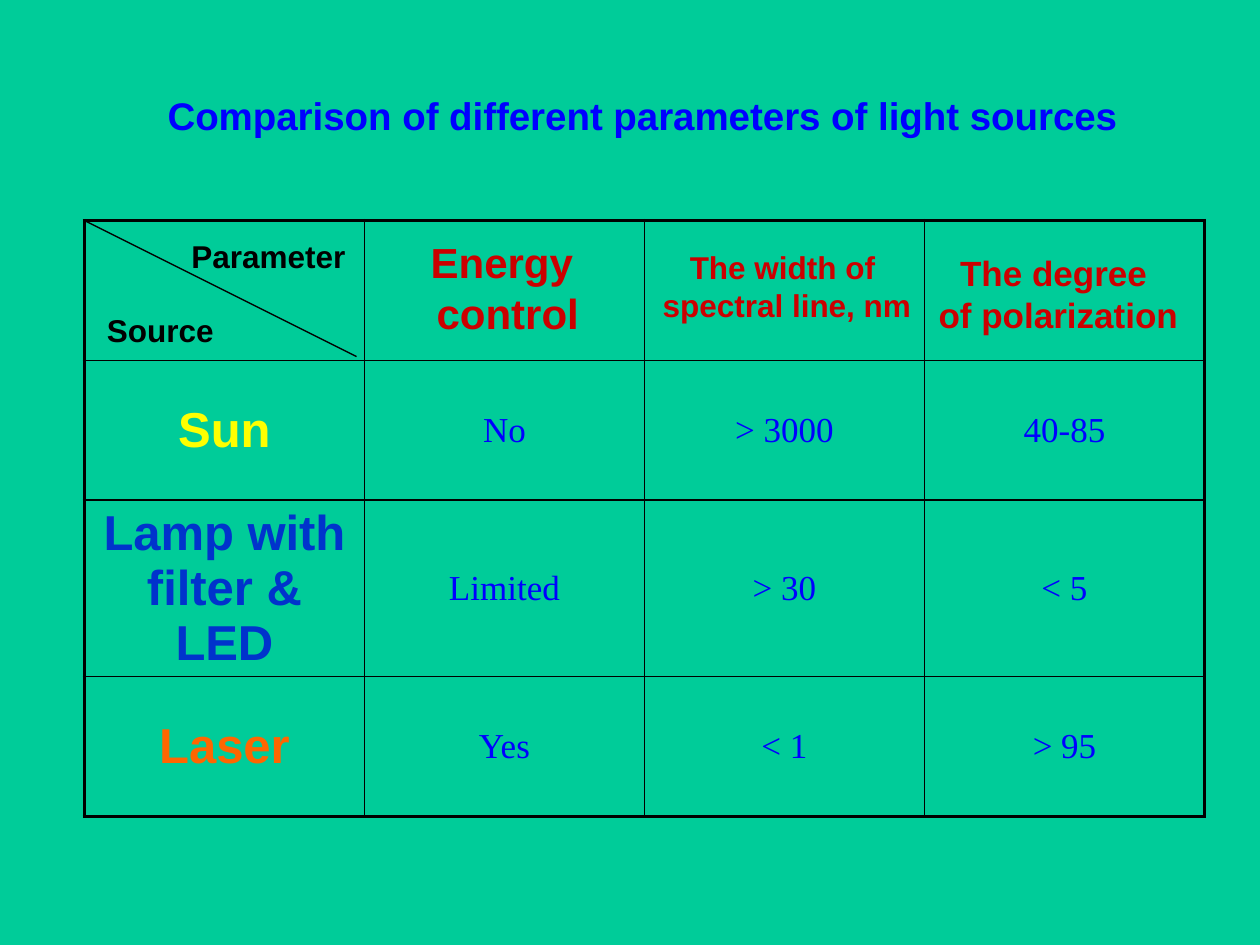
"""Build a slide that compares parameters of light sources in a table."""
import pptx
import pptx.dml.color
import pptx.enum.shapes
import pptx.enum.text
import pptx.oxml.ns
import pptx.util
from dataclasses import dataclass
from lxml import etree

Inches = pptx.util.Inches
Pt = pptx.util.Pt
RGB = pptx.dml.color.RGBColor.from_string
PP_ALIGN = pptx.enum.text.PP_ALIGN
ANCHOR = pptx.enum.text.MSO_ANCHOR
qn = pptx.oxml.ns.qn


@dataclass
class Theme:
    background: str = "00CC99"
    rule: str = "000000"
    value: str = "0000FF"
    parameter: str = "CC0000"
    sun: str = "FFFF00"
    lamp: str = "0033CC"
    laser: str = "FF6600"
    heading_font: str = "Arial"
    value_font: str = "Times New Roman"
    title_size: int = 22
    source_size: int = 28
    value_size: int = 20
    corner_size: int = 18
    inner_rule: float = 1
    outer_rule: float = 2.25
    diagonal_rule: float = 0.75


theme = Theme()


def write(frame, text, size, color, align=PP_ALIGN.CENTER, bold=True):
    frame.text = text
    for paragraph in frame.paragraphs:
        paragraph.alignment = align
        for run in paragraph.runs:
            run.font.size = Pt(size)
            run.font.bold = bold
            run.font.name = theme.heading_font if bold else theme.value_font
            run.font.color.rgb = RGB(color)


def add_border(cell, side, width):
    border = etree.SubElement(cell._tc.get_or_add_tcPr(), qn(f"a:{side}"), w=str(Pt(width)))
    fill = etree.SubElement(border, qn("a:solidFill"))
    etree.SubElement(fill, qn("a:srgbClr"), val=theme.rule)


presentation = pptx.Presentation()
presentation.slide_width = Inches(10)
presentation.slide_height = Inches(7.5)
slide = presentation.slides.add_slide(presentation.slide_layouts[5])
slide.background.fill.solid()
slide.background.fill.fore_color.rgb = RGB(theme.background)

title = slide.shapes.title
title.left, title.top = Inches(1.23), Inches(0.68)
title.width, title.height = Inches(7.85), Inches(0.47)
write(title.text_frame, "Comparison of different parameters of light sources",
      theme.title_size, theme.value, PP_ALIGN.LEFT)
title.text_frame.word_wrap = False
title.text_frame.auto_size = pptx.enum.text.MSO_AUTO_SIZE.NONE
title.text_frame.vertical_anchor = ANCHOR.TOP

sources = [
    ("Sun", theme.sun, ["No", "> 3000", "40-85"]),
    ("Lamp with filter & LED", theme.lamp, ["Limited", "> 30", "< 5"]),
    ("Laser", theme.laser, ["Yes", "< 1", "> 95"]),
]
row_count, column_count = len(sources) + 1, 4
comparison = slide.shapes.add_table(row_count, column_count, Inches(0.67), Inches(1.75),
                                    Inches(8.89), Inches(4.44)).table
comparison.first_row = comparison.horz_banding = False

for row, (source, color, values) in enumerate(sources, start=1):
    write(comparison.cell(row, 0).text_frame, source, theme.source_size, color)
    for column, value in enumerate(values, start=1):
        write(comparison.cell(row, column).text_frame, value, theme.value_size,
              theme.value, bold=False)

for row in range(row_count):
    for column in range(column_count):
        cell = comparison.cell(row, column)
        cell.vertical_anchor = ANCHOR.MIDDLE
        outer_sides = {"lnL": column == 0, "lnR": column == column_count - 1,
                       "lnT": row == 0, "lnB": row == row_count - 1}
        for side, is_outer in outer_sides.items():
            add_border(cell, side, theme.outer_rule if is_outer else theme.inner_rule)
        cell.fill.background()

diagonal = slide.shapes.add_connector(pptx.enum.shapes.MSO_CONNECTOR.STRAIGHT, Inches(0.67),
                                      Inches(1.75), Inches(2.83), Inches(2.83))
diagonal.line.color.rgb = RGB(theme.rule)
diagonal.line.width = Pt(theme.diagonal_rule)
etree.SubElement(diagonal._element.spPr, qn("a:effectLst"))

headings = [
    ("Parameter", 1.42, 1.83, 1.44, 0.4, theme.corner_size, theme.rule, PP_ALIGN.LEFT),
    ("Source", 0.75, 2.42, 1.06, 0.4, theme.corner_size, theme.rule, PP_ALIGN.LEFT),
    ("Energy \ncontrol", 3.31, 1.83, 1.44, 0.91, 24, theme.parameter, PP_ALIGN.CENTER),
    ("The degree \nof polarization", 7.34, 1.95, 2.12, 0.77, 20, theme.parameter,
     PP_ALIGN.CENTER),
    ("The width of \nspectral line, nm", 5.15, 1.92, 2.19, 0.71, 18, theme.parameter,
     PP_ALIGN.CENTER),
]
for text, left, top, width, height, size, color, align in headings:
    heading = slide.shapes.add_textbox(Inches(left), Inches(top), Inches(width), Inches(height))
    write(heading.text_frame, text, size, color, align)
    heading.text_frame.word_wrap = False
    heading.text_frame.auto_size = pptx.enum.text.MSO_AUTO_SIZE.SHAPE_TO_FIT_TEXT

presentation.save("out.pptx")
